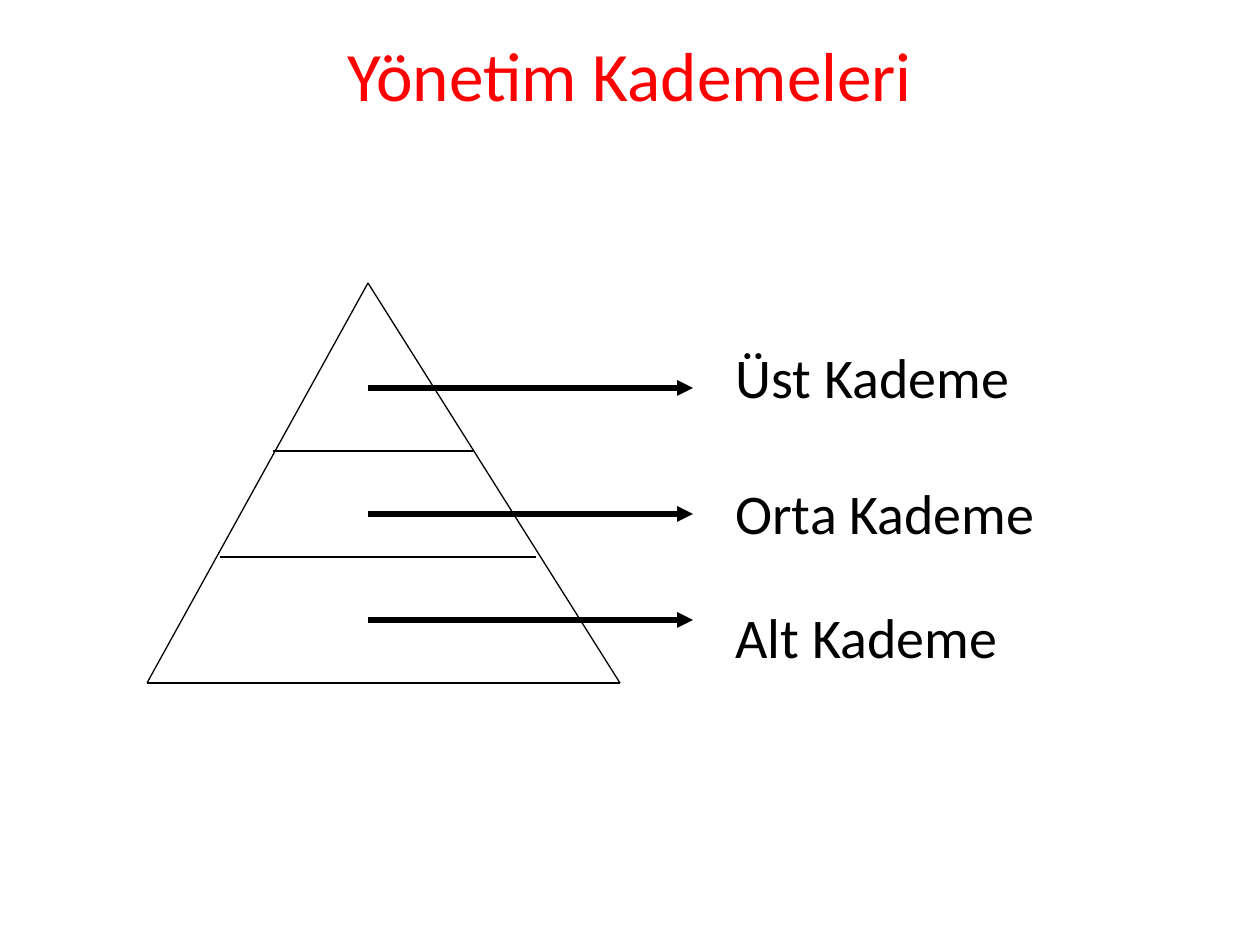
from lxml import etree
from pptx import Presentation
from pptx.dml.color import RGBColor
from pptx.enum.shapes import MSO_CONNECTOR
from pptx.enum.text import MSO_ANCHOR, MSO_AUTO_SIZE, PP_ALIGN
from pptx.oxml.ns import qn
from pptx.util import Emu, Pt

STRAIGHT = MSO_CONNECTOR.STRAIGHT
TOP = MSO_ANCHOR.TOP
NO_FIT = MSO_AUTO_SIZE.NONE
GROW = MSO_AUTO_SIZE.SHAPE_TO_FIT_TEXT
LEFT, CENTER = PP_ALIGN.LEFT, PP_ALIGN.CENTER
SCALE = 914400 / 126
TITLE_ONLY = 5


def px(length):
    return Emu(round(length * SCALE))


def color(hex_string):
    return RGBColor.from_string(hex_string)


def apply(target, values):
    for name, value in values.items():
        setattr(target, name, value)


class SlideBuilder:
    font = "Calibri"
    ink = "000000"
    accent = "FF0000"

    def __init__(self, slide):
        self.slide = slide

    def set_text(self, shape, text, size, fill, alignment, frame_values):
        frame = shape.text_frame
        apply(frame, {"word_wrap": True, "vertical_anchor": TOP, **frame_values})
        paragraph = frame.paragraphs[0]
        paragraph.alignment = alignment
        run = paragraph.add_run()
        run.text = text
        apply(run.font, {"name": self.font, "size": Pt(size)})
        run.font.color.rgb = color(fill)

    def title(self, text, left, top, width, height):
        shape = self.slide.shapes.title
        apply(shape, {"left": px(left), "top": px(top),
                      "width": px(width), "height": px(height)})
        self.set_text(shape, text, 39.6, self.accent, CENTER,
                      {"auto_size": NO_FIT, "margin_top": 0})

    def label(self, text, left, top, width, height):
        shape = self.slide.shapes.add_textbox(
            px(left), px(top), px(width), px(height))
        self.set_text(shape, text, 32, self.ink, LEFT, {"auto_size": GROW})

    def line(self, start, end, weight=0.75):
        connector = self.slide.shapes.add_connector(
            STRAIGHT, *map(px, start + end))
        connector.line.width = Pt(weight)
        connector.line.color.rgb = color(self.ink)
        etree.SubElement(connector._element.spPr, qn("a:effectLst"))
        return connector

    def arrow(self, start, end):
        connector = self.line(start, end, 3)
        outline = connector._element.spPr.find(qn("a:ln"))
        etree.SubElement(outline, qn("a:tailEnd"), type="triangle")


def main():
    presentation = Presentation()
    apply(presentation, {"slide_width": px(1260), "slide_height": px(945)})
    layout = presentation.slide_layouts[TITLE_ONLY]
    builder = SlideBuilder(presentation.slides.add_slide(layout))

    builder.title("Yönetim Kademeleri", 63, 32, 1134, 158)

    apex, base_left, base_right = (368, 283), (147, 683), (620, 683)
    for start, end in ((apex, base_right), (base_right, base_left),
                       (apex, base_left)):
        builder.line(start, end)
    for left, right, y in ((273, 473, 451), (220, 536, 557)):
        builder.line((left, y), (right, y))

    levels = (("Üst Kademe", 388, 336, 306),
              ("Orta Kademe", 514, 472, 360),
              ("Alt Kademe", 620, 596, 432))
    for text, arrow_y, label_top, label_width in levels:
        builder.arrow((apex[0], arrow_y), (693, arrow_y))
        builder.label(text, 723, label_top, label_width, 80)

    presentation.save("out.pptx")


if __name__ == "__main__":
    main()
